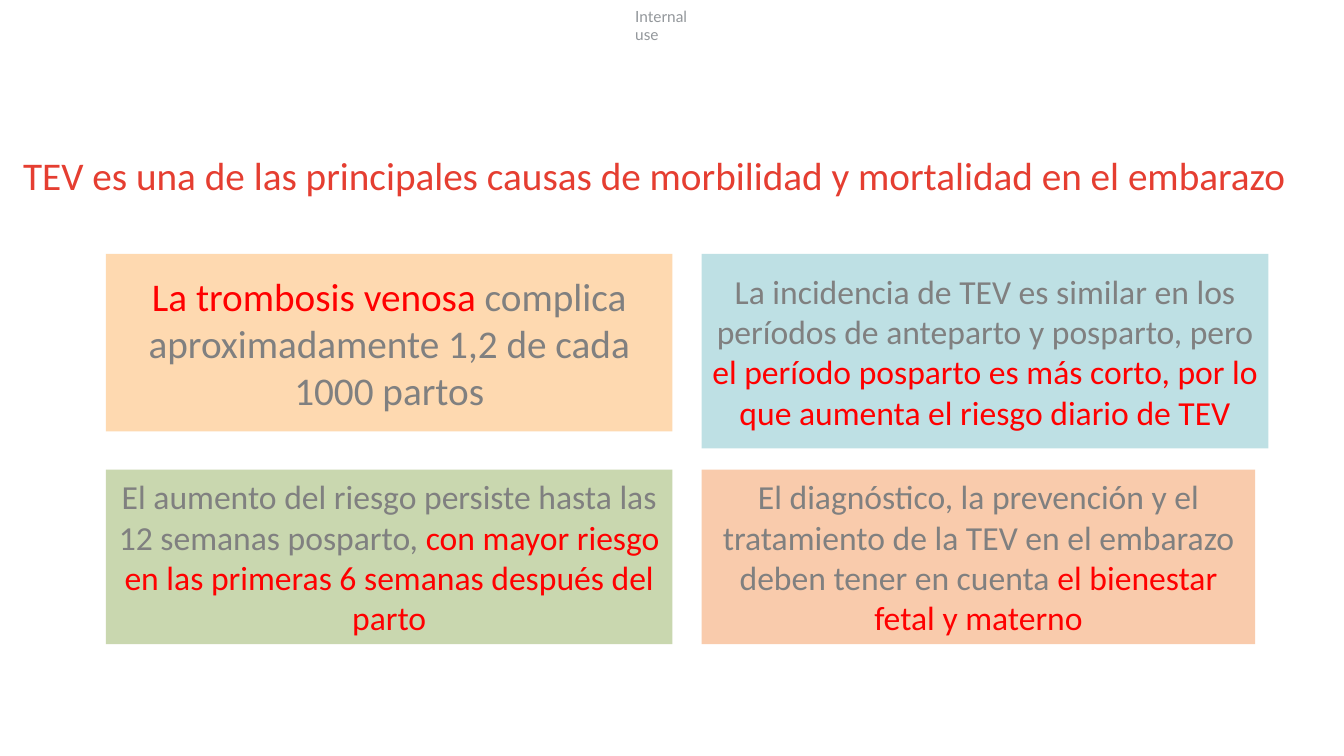
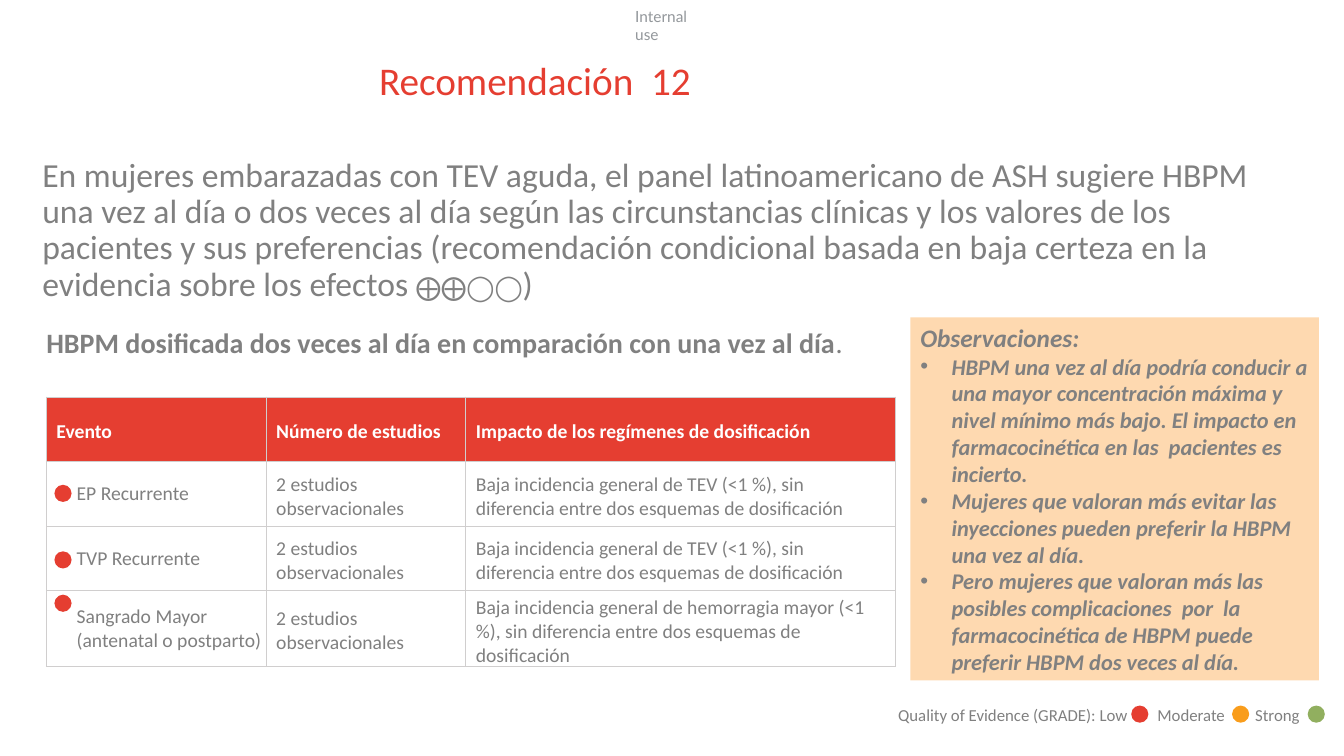
import pptx
import pptx.util
import pptx.dml.color
import pptx.enum.text
import pptx.enum.shapes
import pptx.oxml.ns
import lxml.etree

Inches = pptx.util.Inches
Pt = pptx.util.Pt
RGBColor = pptx.dml.color.RGBColor
Align = pptx.enum.text.PP_ALIGN
Anchor = pptx.enum.text.MSO_ANCHOR
Shape = pptx.enum.shapes.MSO_SHAPE
qn = pptx.oxml.ns.qn

WHITE = RGBColor(0xFF, 0xFF, 0xFF)
GRAY = RGBColor(0x80, 0x80, 0x80)
PALE = RGBColor(0x93, 0x97, 0x9B)
RULE = RGBColor(0xD0, 0xCE, 0xCE)
RED = RGBColor(0xFF, 0x00, 0x00)
BRICK = RGBColor(0xE5, 0x3E, 0x31)
AMBER = RGBColor(0xF9, 0x9D, 0x1C)
LEAF = RGBColor(0x91, 0xAF, 0x5F)
PEACH = RGBColor(0xFE, 0xD9, 0xB0)
SKY = RGBColor(0xBE, 0xE0, 0xE4)
SAGE = RGBColor(0xC9, 0xD7, 0xAF)
CORAL = RGBColor(0xF9, 0xCB, 0xAC)

BARE = dict(margin_left=0, margin_top=0, margin_right=0, margin_bottom=0)
HEAD = dict(BARE, vertical_anchor=Anchor.TOP, word_wrap=True,
            auto_size=pptx.enum.text.MSO_AUTO_SIZE.NONE)
MIDDLE = dict(vertical_anchor=Anchor.MIDDLE)
TOP = dict(vertical_anchor=Anchor.TOP)
LEFT = dict(alignment=Align.LEFT)
CENTER = dict(alignment=Align.CENTER)
TIGHT = dict(alignment=Align.LEFT, line_spacing=0.9)
DOT = 0.17

CARDS = [
    (1.05, 2.52, 5.62, 1.76, PEACH, 28,
     [("La trombosis venosa ", RED),
      ("complica aproximadamente 1,2 de cada 1000 partos", GRAY)]),
    (6.96, 2.52, 5.62, 1.93, SKY, 24,
     [("La incidencia de TEV es similar en los períodos de anteparto y posparto, pero ", GRAY),
      ("el período posparto es más corto, por lo que aumenta el riesgo diario de TEV", RED)]),
    (1.05, 4.66, 5.62, 1.73, SAGE, 24,
     [("El aumento del riesgo persiste hasta las 12 semanas posparto, ", GRAY),
      ("con mayor riesgo en las primeras 6 semanas después del parto", RED)]),
    (6.96, 4.66, 5.49, 1.73, CORAL, 24,
     [("El diagnóstico, la prevención y el tratamiento de la TEV en el embarazo "
       "deben tener en cuenta ", GRAY),
      ("el bienestar fetal y materno", RED)]),
]

STUDY = "2 estudios observacionales"
SAME = "Baja incidencia general de TEV (<1 %), sin diferencia entre dos esquemas de dosificación"
ROWS = [
    ("Evento", "Número de estudios", "Impacto de los regímenes de dosificación"),
    ("EP Recurrente", STUDY, SAME),
    ("TVP Recurrente", STUDY, SAME),
    ("Sangrado Mayor (antenatal o postparto)", STUDY,
     "Baja incidencia general de hemorragia mayor (<1 %), sin diferencia entre dos "
     "esquemas de dosificación"),
]

ADVICE = [
    "En mujeres embarazadas con TEV aguda, el panel latinoamericano de ASH sugiere HBPM "
    "una vez al día o dos veces al día según las circunstancias clínicas y los valores de "
    "los pacientes y sus preferencias (recomendación condicional basada en baja certeza en "
    "la evidencia sobre los efectos ",
    "⨁⨁◯◯",
    ")",
]

NOTES = [
    "HBPM una vez al día podría conducir a una mayor concentración máxima y nivel mínimo "
    "más bajo. El impacto en farmacocinética en las  pacientes es incierto.",
    "Mujeres que valoran más evitar las inyecciones pueden preferir la HBPM una vez al día.",
    "Pero mujeres que valoran más las posibles complicaciones  por  la farmacocinética de "
    "HBPM puede preferir HBPM dos veces al día.",
]

GRADES = [
    ("Quality of Evidence (GRADE): Low", 0, 2.6, 2.41, BRICK),
    ("Moderate", 2.57, 0.95, 3.41, AMBER),
    ("Strong", 3.54, 0.75, 4.16, LEAF),
]


def put(item, form):
    """Set attributes from a dict of format values."""
    for name, value in form.items():
        setattr(item, name, value)


def run(text, size, color=GRAY, **form):
    """Describe one run of text."""
    return text, color, dict(dict(name="Calibri", size=Pt(size)), **form)


def write(frame, paras, form, para_form):
    """Fill a text frame with paragraphs of runs."""
    put(frame, form)
    for i, runs in enumerate(paras):
        para = frame.add_paragraph() if i else frame.paragraphs[0]
        put(para, para_form)
        for text, color, font in runs:
            part = para.add_run()
            part.text = text
            put(part.font, font)
            part.font.color.rgb = color


def label(slide, box, runs, form=BARE, para_form=LEFT):
    """Add a wrapped text box."""
    item = slide.shapes.add_textbox(*map(Inches, box))
    write(item.text_frame, [runs], dict(form, word_wrap=True), para_form)


def block(slide, box, fill, kind=Shape.RECTANGLE):
    """Add a flat filled shape."""
    item = slide.shapes.add_shape(kind, *map(Inches, box))
    item.shadow.inherit = False
    item.fill.solid()
    item.fill.fore_color.rgb = fill
    item.line.fill.background()
    return item


def dot(slide, left, top, fill):
    """Add a round marker."""
    block(slide, (left, top, DOT, DOT), fill, Shape.OVAL)


def start(deck, box, title):
    """Add a slide with the shared label and title style."""
    slide = deck.slides.add_slide(deck.slide_layouts[5])
    label(slide, (6.3, 0.07, 0.78, 0.36), [run("Internal use", 11, PALE, name="Lato")])
    head = slide.shapes.title
    put(head, dict(zip(("left", "top", "width", "height"), map(Inches, box))))
    write(head.text_frame, [[run(title, 28, BRICK)]], HEAD, TIGHT)
    return slide


def bullet(para):
    """Give a paragraph a hanging bullet."""
    props = para._p.get_or_add_pPr()
    props.set("marL", str(Inches(0.31)))
    props.set("indent", str(-Inches(0.31)))
    lxml.etree.SubElement(props, qn("a:buFont")).set("typeface", "Arial")
    lxml.etree.SubElement(props, qn("a:buChar")).set("char", "•")


def border(cell):
    """Draw a thin line on all sides of a cell."""
    props = cell._tc.get_or_add_tcPr()
    for i, side in enumerate(("lnL", "lnR", "lnT", "lnB")):
        line = lxml.etree.Element(qn("a:" + side), w=str(Pt(1)))
        fill = lxml.etree.SubElement(line, qn("a:solidFill"))
        lxml.etree.SubElement(fill, qn("a:srgbClr")).set("val", str(RULE))
        props.insert(i, line)


def grid(slide, left, top):
    """Add the table of events with its markers."""
    cols, highs = (2.18, 1.98, 4.26), (0.64, 0.64, 0.64, 0.75)
    box = map(Inches, (left, top, sum(cols), sum(highs)))
    table = slide.shapes.add_table(len(ROWS), len(cols), *box).table
    put(table, dict(first_row=False, horz_banding=False))
    for col, width in zip(table.columns, cols):
        col.width = Inches(width)
    for r, texts in enumerate(ROWS):
        table.rows[r].height = Inches(highs[r])
        for c, text in enumerate(texts):
            cell = table.cell(r, c)
            mark = r > 0 and c == 0
            sides = (0.3, 0, 0, 0) if mark else (0.1, 0.05, 0.1, 0)
            form = dict(zip(BARE, map(Inches, sides)), **MIDDLE)
            put(cell, form)
            words = run(text, 14, GRAY if r else WHITE, bold=r == 0)
            write(cell.text_frame, [[words]], {}, LEFT)
            if r:
                cell.fill.background()
            else:
                cell.fill.solid()
                cell.fill.fore_color.rgb = BRICK
            border(cell)
    for drop in (0.87, 1.53, 1.96):
        dot(slide, left + 0.08, top + drop, BRICK)


def panel(slide, box):
    """Add the panel of remarks."""
    frame = block(slide, box, PEACH).text_frame
    bold = dict(bold=True, italic=True)
    paras = [[run("Observaciones:", 18, **bold)]]
    paras += [[run(note, 16, **bold)] for note in NOTES]
    write(frame, paras, dict(TOP, word_wrap=True), LEFT)
    for para in frame.paragraphs[1:]:
        bullet(para)


def legend(slide, left, top):
    """Add the key to the grades of evidence."""
    for text, shift, width, mark, color in GRADES:
        label(slide, (left + shift, top, width, 0.3), [run(text, 12)], TOP)
        dot(slide, left + mark, top + 0.06, color)


def causes(deck):
    """Build the slide of four cards."""
    slide = start(deck, (0.23, 1.55, 13.09, 0.46),
                  "TEV es una de las principales causas de morbilidad y mortalidad en el embarazo")
    for *box, fill, size, parts in CARDS:
        card = block(slide, box, fill)
        runs = [run(text, size, color) for text, color in parts]
        write(card.text_frame, [runs], dict(MIDDLE, word_wrap=True), CENTER)


def advise(deck):
    """Build the slide of the recommendation."""
    slide = start(deck, (3.76, 0.61, 5.15, 0.46), "Recomendación  12")
    label(slide, (0.42, 1.57, 12, 1.44),
          [run(text, size) for text, size in zip(ADVICE, (24, 18, 24))], BARE, TIGHT)
    label(slide, (0.46, 3.23, 8.4, 0.34),
          [run("HBPM dosificada dos veces al día en comparación con una vez al día", 20, bold=True),
           run(".", 20)])
    grid(slide, 0.46, 3.94)
    panel(slide, (9.03, 3.15, 4.05, 3.6))
    legend(slide, 8.81, 6.94)


def main():
    """Build and save the deck."""
    deck = pptx.Presentation()
    put(deck, dict(slide_width=Inches(13.33), slide_height=Inches(7.5)))
    causes(deck)
    advise(deck)
    deck.save("out.pptx")


if __name__ == "__main__":
    main()
